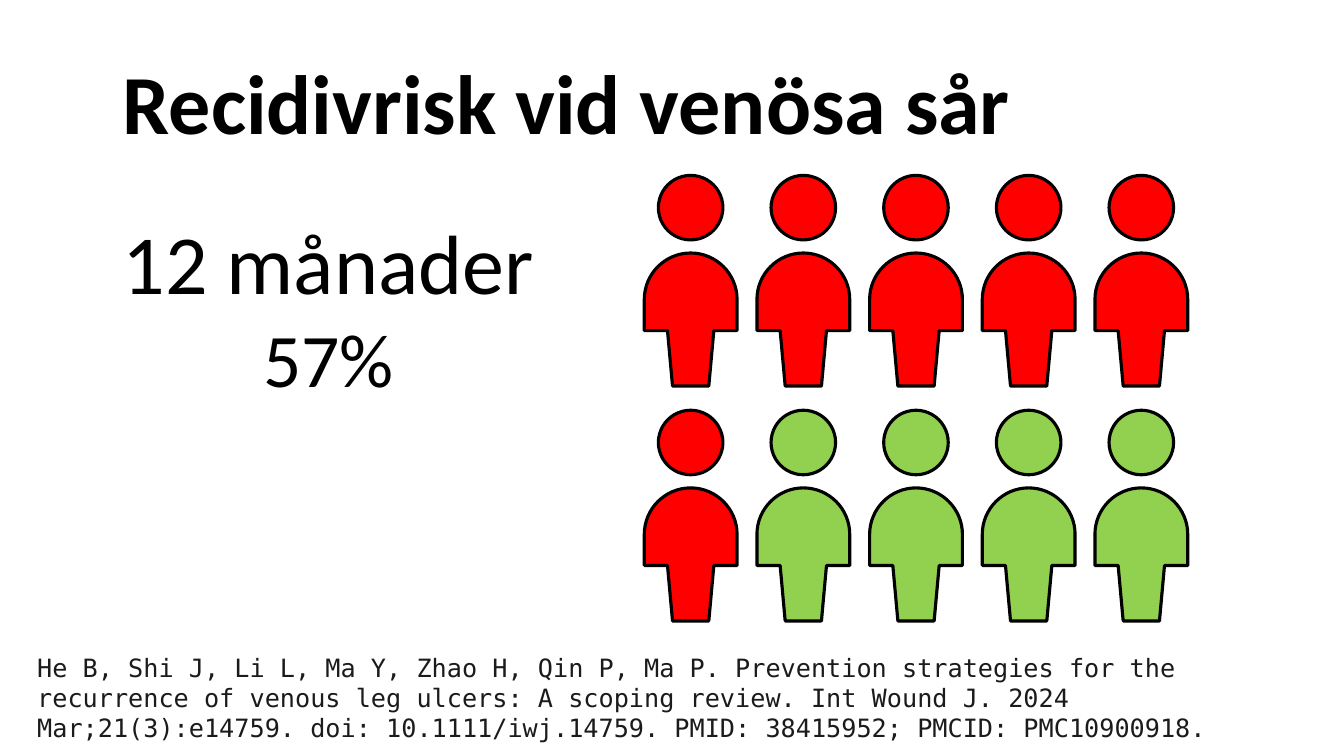
from lxml import etree
from pptx import Presentation, util as u
from pptx.dml.color import RGBColor
from pptx.enum import shapes, text
from pptx.oxml.ns import qn

BLACK, RELAPSE, HEALED = "000000", "FF0000", "92D050"

deck = Presentation()
deck.slide_width, deck.slide_height = u.Inches(13.33), u.Inches(7.5)
slide = deck.slides.add_slide(deck.slide_layouts[6])


def write(lines, left, top, width, height, font="Calibri", color=BLACK, bold=False,
          spacing=None, anchor=text.MSO_ANCHOR.TOP, wrap=True):
    """Add a text box; each line is (wording, point size, alignment)."""
    frame = slide.shapes.add_textbox(*map(u.Inches, (left, top, width, height))).text_frame
    frame.word_wrap, frame.vertical_anchor = wrap, anchor
    for number, (wording, size, align) in enumerate(lines):
        paragraph = frame.add_paragraph() if number else frame.paragraphs[0]
        paragraph.alignment, paragraph.line_spacing = align, spacing
        run = paragraph.add_run()
        run.text = wording
        run.font.name, run.font.size, run.font.bold = font, u.Pt(size), bold
        run.font.color.rgb = RGBColor.from_string(color)


def paint(part, fill):
    part.shadow.inherit = False
    part.fill.solid()
    part.fill.fore_color.rgb = RGBColor.from_string(fill)
    part.line.color.rgb = RGBColor.from_string(BLACK)
    part.line.width = u.Pt(2.25)
    etree.SubElement(part.line._ln, qn("a:round"))


LEFT, CENTER = text.PP_ALIGN.LEFT, text.PP_ALIGN.CENTER
write([("Recidivrisk vid venösa sår", 60, LEFT)], 1.12, 0.34, 11.5, 1.45,
      bold=True, spacing=0.9, anchor=text.MSO_ANCHOR.MIDDLE)

# Ten people in a grid; body outline is relative to the centre of the shoulder arc
COLUMNS, ROWS, RELAPSES = 5, 2, 6
FIRST_X, LAST_X, FIRST_Y, STEP_Y = 6.85, 11.32, 1.74, 2.33
STEP_X = (LAST_X - FIRST_X) / (COLUMNS - 1)
HEAD, SHOULDER, SHOULDER_DROP = 0.64, 0.46, 1.23
BEND = 0.55 * SHOULDER
right_side = [(0.18, 0.86), (0.23, 0.31), (SHOULDER, 0.31), (SHOULDER, 0),
              (SHOULDER, -BEND), (BEND, -SHOULDER)]
left_side = [(-x, y) for x, y in reversed(right_side)]
outline = right_side + [(0, -SHOULDER)] + left_side

for person in range(COLUMNS * ROWS):
    row, column = divmod(person, COLUMNS)
    center, top = FIRST_X + column * STEP_X, FIRST_Y + row * STEP_Y
    fill = RELAPSE if person < RELAPSES else HEALED
    figure = slide.shapes.add_group_shape().shapes

    points = [(u.Inches(center + x), u.Inches(top + SHOULDER_DROP + y)) for x, y in outline]
    builder = figure.build_freeform(*points[0])
    builder.add_line_segments(points[1:], close=True)
    body = builder.convert_to_shape()
    # Each shoulder: two control points and an end point become one curve
    segments = list(body._element.iter(qn("a:lnTo")))
    for first in (3, 6):
        curve = etree.Element(qn("a:cubicBezTo"))
        segments[first].addprevious(curve)
        for segment in segments[first:first + 3]:
            curve.append(segment[0])
            segment.getparent().remove(segment)
    paint(body, fill)

    paint(figure.add_shape(
        shapes.MSO_SHAPE.OVAL, u.Inches(center - HEAD / 2), u.Inches(top),
        u.Inches(HEAD), u.Inches(HEAD)), fill)

write([("12 månader", 60, LEFT), ("57%", 54, CENTER)], 1.12, 2.04, 4.32, 2.02, wrap=False)
write([("He B, Shi J, Li L, Ma Y, Zhao H, Qin P, Ma P. Prevention strategies for the "
        "recurrence of venous leg ulcers: A scoping review. Int Wound J. 2024 "
        "Mar;21(3):e14759. doi: 10.1111/iwj.14759. PMID: 38415952; PMCID: PMC10900918.",
        18, LEFT)], 0.27, 6.42, 12.52, 1.01, font="DejaVu Sans Mono", color="1B1B1B")

deck.save("out.pptx")
